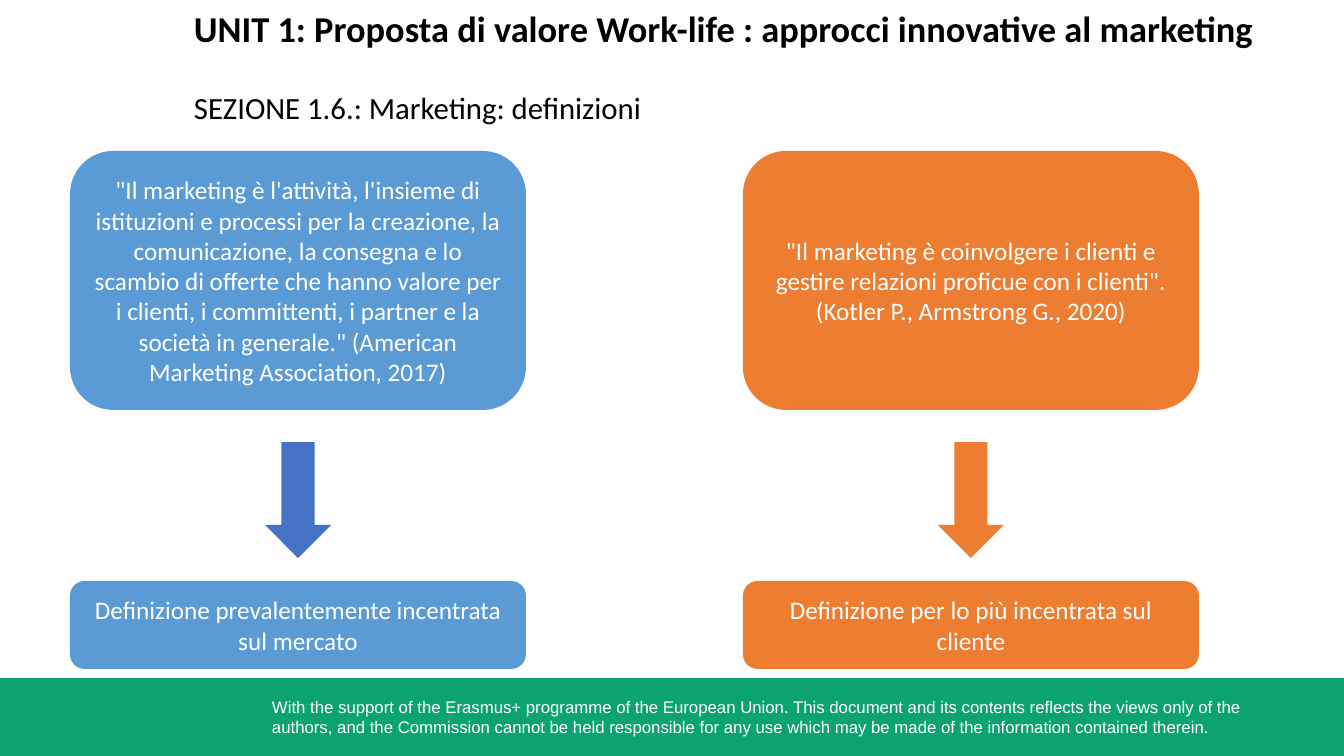
import pptx
import pptx.util
import pptx.dml.color
import pptx.enum.shapes
import pptx.enum.text
from dataclasses import dataclass

WIDE, HIGH = 1344, 756
SCALE = 12192000 / WIDE  # EMU in one px
KIND = pptx.enum.shapes.MSO_SHAPE
ALIGN = pptx.enum.text.PP_ALIGN
ANCHOR = pptx.enum.text.MSO_ANCHOR


@dataclass(frozen=True)
class Theme:
    ink: str = "000000"
    white: str = "FFFFFF"
    green: str = "0CA373"
    sky: str = "5B9BD5"
    blue: str = "4472C4"
    orange: str = "ED7D31"
    font: str = "Calibri"
    small: str = "Arial"
    title: int = 26
    section: int = 22
    body: int = 18
    note: int = 12


THEME = Theme()


def px(n):
    return pptx.util.Emu(round(n * SCALE))


def rgb(code):
    return pptx.dml.color.RGBColor.from_string(code)


def write(shape, text, size, color, font=THEME.font, bold=False,
          align=ALIGN.LEFT, anchor=ANCHOR.TOP, inset=(0, 0, 0, 0)):
    frame = shape.text_frame
    frame.word_wrap = True
    frame.vertical_anchor = anchor
    (frame.margin_left, frame.margin_top,
     frame.margin_right, frame.margin_bottom) = map(px, inset)
    para = frame.paragraphs[0]
    para.alignment = align
    run = para.add_run()
    run.text = text
    run.font.name = font
    run.font.size = pptx.util.Pt(size)
    run.font.bold = bold
    run.font.color.rgb = rgb(color)


def draw(slide, kind, box, fill):
    shape = slide.shapes.add_shape(kind, *map(px, box))
    shape.shadow.inherit = False
    shape.fill.solid()
    shape.fill.fore_color.rgb = rgb(fill)
    shape.line.fill.background()
    return shape


def label(slide, box, *args, **style):
    write(slide.shapes.add_textbox(*map(px, box)), *args, **style)


def footer(slide, box):
    x, y, w, h = box
    draw(slide, KIND.RECTANGLE, box, THEME.green)
    label(slide, (x + 262, y + 14, 1050, 50),
          "With the support of the Erasmus+ programme of the European Union. "
          "This document and its contents reflects the views only of the "
          "authors, and the Commission cannot be held responsible for any "
          "use which may be made of the information contained therein.",
          THEME.note, THEME.white, font=THEME.small, inset=(10, 5, 10, 5))


def header(slide, box):
    x, y, w, h = box
    label(slide, (x, y, w, 45),
          "UNIT 1: Proposta di valore Work-life : approcci innovative al marketing",
          THEME.title, THEME.ink, bold=True, inset=(0, 1, 0, 0))
    label(slide, (x, y + 82, w, 39), "SEZIONE 1.6.: Marketing: definizioni",
          THEME.section, THEME.ink, inset=(0, 2, 0, 0))


def card(slide, box, text, fill):
    shape = draw(slide, KIND.ROUNDED_RECTANGLE, box, fill)
    write(shape, text, THEME.body, THEME.white, align=ALIGN.CENTER,
          anchor=ANCHOR.MIDDLE, inset=(10, 5, 10, 5))


def column(slide, box, quote, focus, fill, tint):
    x, y, w, h = box
    card(slide, (x, y, w, 259), quote, fill)
    arrow = 66
    draw(slide, KIND.DOWN_ARROW,
         (x + (w - arrow) // 2, y + 291, arrow, 116), tint)
    base = 88
    card(slide, (x, y + h - base, w, base), focus, fill)


def main():
    deck = pptx.Presentation()
    deck.slide_width, deck.slide_height = px(WIDE), px(HIGH)
    slide = deck.slides.add_slide(deck.slide_layouts[6])

    # Footer band
    footer(slide, (0, 678, WIDE, 78))

    # Title and section
    header(slide, (194, 5, 1150, 121))

    # Definitions, each leading to its focus
    columns = [
        ("\"Il marketing è l'attività, l'insieme di istituzioni e processi "
         "per la creazione, la comunicazione, la consegna e lo scambio di "
         "offerte che hanno valore per i clienti, i committenti, i partner "
         "e la società in generale.\" (American Marketing Association, 2017)",
         "Definizione prevalentemente incentrata sul mercato",
         THEME.sky, THEME.blue),
        ("\"Il marketing è coinvolgere i clienti e gestire relazioni "
         "proficue con i clienti\". (Kotler P., Armstrong G., 2020)",
         "Definizione per lo più incentrata sul cliente",
         THEME.orange, THEME.orange),
    ]
    for i, parts in enumerate(columns):
        column(slide, (70 + 673 * i, 151, 456, 518), *parts)

    deck.save("out.pptx")


if __name__ == "__main__":
    main()
